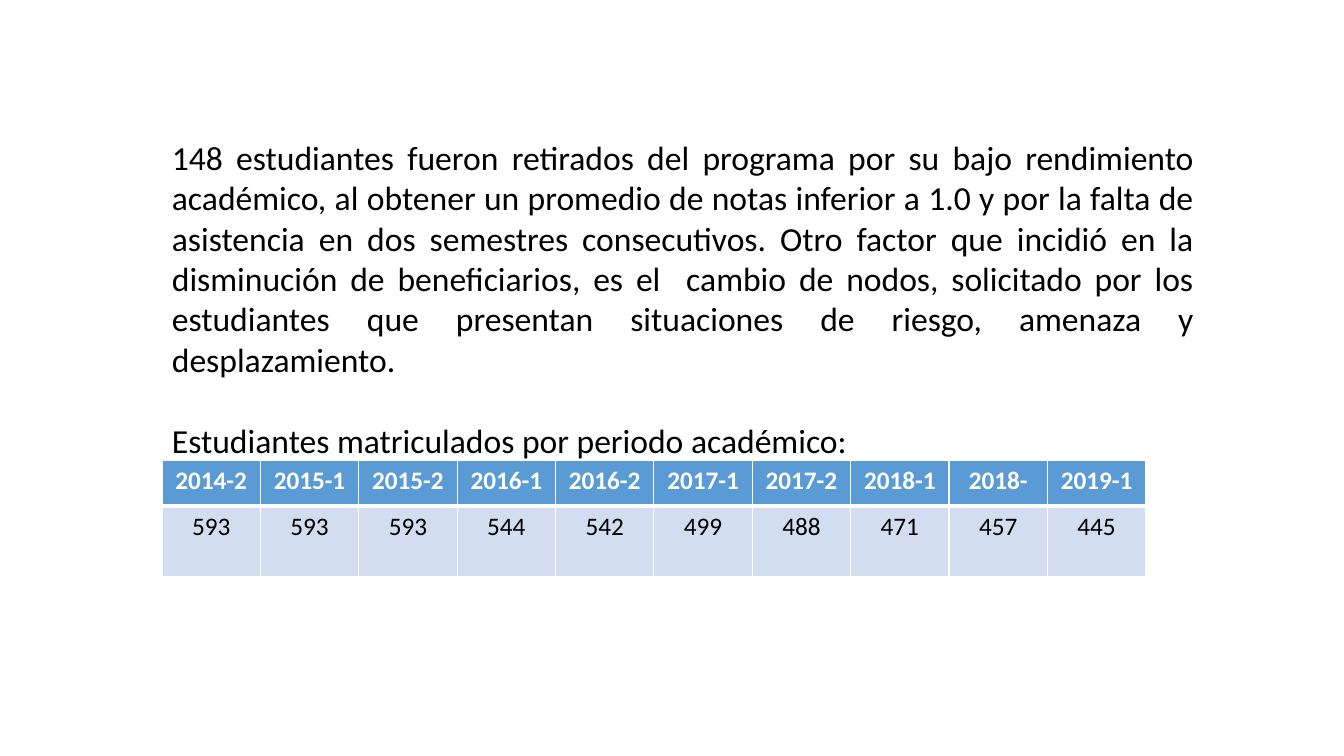
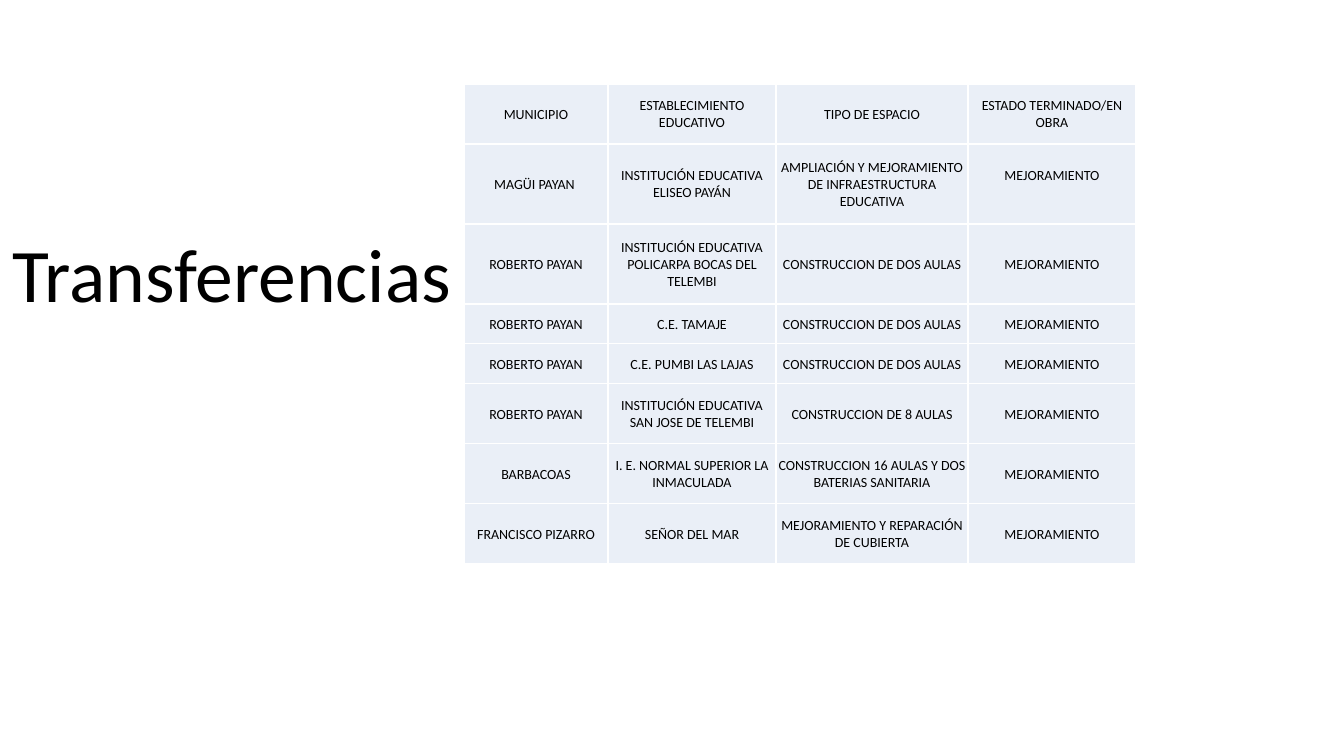
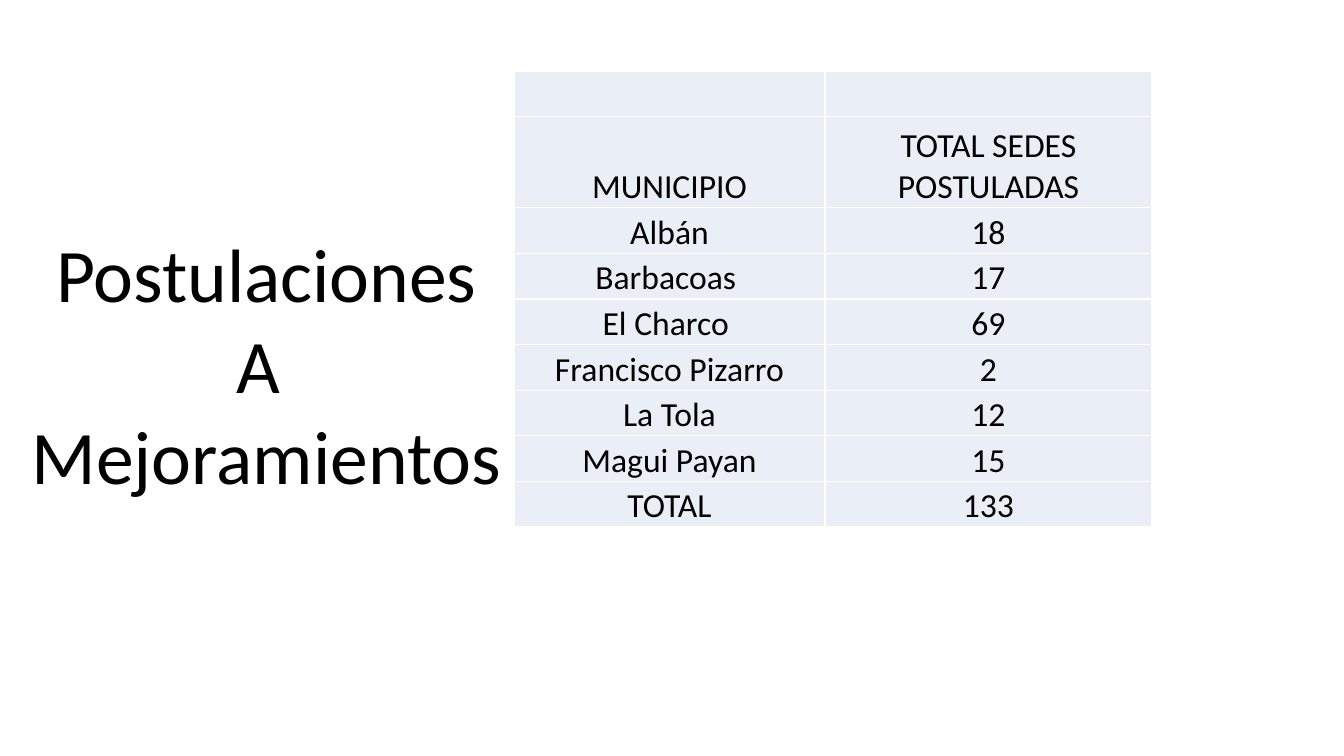
from dataclasses import dataclass

from lxml.etree import SubElement
from pptx import Presentation
from pptx.dml.color import RGBColor
from pptx.enum.text import MSO_ANCHOR as Anchor, MSO_AUTO_SIZE as AutoSize, PP_ALIGN as Align
from pptx.oxml.ns import qn
from pptx.util import Emu, Pt

EMU_PER_PX = 914400 / 100.8
TITLE_ONLY, BLANK = 5, 6


@dataclass(frozen=True)
class Theme:
    font: str = "Calibri"
    ink: str = "000000"
    paper: str = "FFFFFF"
    header: str = "5B9BD5"
    band: str = "D2DEEF"
    pale: str = "EAEFF7"
    title: int = 54
    body: int = 24
    figures: int = 18
    small: int = 10


THEME = Theme()


def px(length):
    return Emu(round(length * EMU_PER_PX))


def add_run(paragraph, text, size, color=THEME.ink, bold=False):
    run = paragraph.add_run()
    run.text = text
    run.font.name = THEME.font
    run.font.size = Pt(size)
    run.font.bold = bold
    run.font.color.rgb = RGBColor.from_string(color)


def add_lines(frame, lines, size, align, gap=0):
    """Write one paragraph per line, with gap points between them."""
    for index, line in enumerate(lines):
        paragraph = frame.paragraphs[0] if index == 0 else frame.add_paragraph()
        paragraph.alignment = align
        if index and gap:
            paragraph.space_before = Pt(gap)
        add_run(paragraph, line, size)


def set_borders(cell, bottom=1):
    properties = cell._tc.get_or_add_tcPr()
    for side, width in (("L", 1), ("R", 1), ("T", 1), ("B", bottom)):
        line = SubElement(properties, qn(f"a:ln{side}"), w=str(Pt(width)))
        fill = SubElement(line, qn("a:solidFill"))
        SubElement(fill, qn("a:srgbClr"), val=THEME.paper)


def share(total, weights):
    return [px(total * weight / sum(weights)) for weight in weights]


def add_grid(slide, box, rows, columns, heights, size, anchor=Anchor.TOP,
             tight=True, fill=THEME.pale, header=False):
    """Place a table; columns and heights are relative weights within the box."""
    table = slide.shapes.add_table(len(rows), len(columns), *map(px, box)).table
    table.first_row = table.horz_banding = False
    for column, width in zip(table.columns, share(box[2], columns)):
        column.width = width
    for row, height in zip(table.rows, share(box[3], heights)):
        row.height = height

    for r, texts in enumerate(rows):
        is_header = header and r == 0
        for c, text in enumerate(texts):
            cell = table.cell(r, c)
            set_borders(cell, bottom=3 if is_header else 1)
            cell.fill.solid()
            cell.fill.fore_color.rgb = RGBColor.from_string(THEME.header if is_header else fill)
            if not text:
                continue
            cell.vertical_anchor = anchor
            if tight:
                cell.margin_left = cell.margin_top = cell.margin_right = px(1)
                cell.margin_bottom = 0
            paragraph = cell.text_frame.paragraphs[0]
            paragraph.alignment = Align.CENTER
            add_run(paragraph, text, size, THEME.paper if is_header else THEME.ink, is_header)
    return table


def add_side_title(slide, box, lines):
    title = slide.shapes.title
    title.left, title.top, title.width, title.height = map(px, box)
    frame = title.text_frame
    frame.word_wrap = False
    frame.auto_size = AutoSize.SHAPE_TO_FIT_TEXT
    frame.vertical_anchor = Anchor.TOP
    add_lines(frame, lines, THEME.title, Align.CENTER)


def enrolment_slide(deck):
    slide = deck.slides.add_slide(deck.slide_layouts[BLANK])

    # Explanation and table caption
    frame = slide.shapes.add_textbox(*map(px, (162, 132, 1042, 417))).text_frame
    frame.word_wrap = True
    add_lines(frame, [
        "148 estudiantes fueron retirados del programa por su bajo rendimiento académico, "
        "al obtener un promedio de notas inferior a 1.0 y por la falta de asistencia en dos "
        "semestres consecutivos. Otro factor que incidió en la disminución de beneficiarios, "
        "es el  cambio de nodos, solicitado por los estudiantes que presentan situaciones de "
        "riesgo, amenaza y desplazamiento.",
        "Estudiantes matriculados por periodo académico:",
    ], THEME.body, Align.JUSTIFY, gap=29)

    # Students per term
    terms = ["2014-2", "2015-1", "2015-2", "2016-1", "2016-2",
             "2017-1", "2017-2", "2018-1", "2018-", "2019-1"]
    students = ["593", "593", "593", "544", "542", "499", "488", "471", "457", "445"]
    add_grid(slide, (162, 460, 984, 117), [terms, students], [1] * len(terms), [46, 71],
             THEME.figures, tight=False, fill=THEME.band, header=True)


def transfers_slide(deck):
    slide = deck.slides.add_slide(deck.slide_layouts[TITLE_ONLY])
    add_side_title(slide, (0, 222, 464, 102), ["Transferencias"])

    # Works by school
    two_rooms = "CONSTRUCCION DE DOS AULAS"
    works = [
        ("MAGÜI PAYAN ", "INSTITUCIÓN EDUCATIVA ELISEO PAYÁN",
         "AMPLIACIÓN Y MEJORAMIENTO DE INFRAESTRUCTURA EDUCATIVA"),
        ("ROBERTO PAYAN", "INSTITUCIÓN EDUCATIVA POLICARPA BOCAS DEL TELEMBI", two_rooms),
        ("ROBERTO PAYAN", "C.E. TAMAJE", two_rooms),
        ("ROBERTO PAYAN", "C.E. PUMBI LAS LAJAS", two_rooms),
        ("ROBERTO PAYAN", "INSTITUCIÓN EDUCATIVA SAN JOSE DE TELEMBI",
         "CONSTRUCCION DE 8 AULAS"),
        ("BARBACOAS", "I. E. NORMAL SUPERIOR LA INMACULADA",
         "CONSTRUCCION 16 AULAS Y DOS BATERIAS SANITARIA"),
        ("FRANCISCO PIZARRO", "SEÑOR DEL MAR", "MEJORAMIENTO Y REPARACIÓN DE CUBIERTA"),
    ]
    headings = ("MUNICIPIO", "ESTABLECIMIENTO EDUCATIVO", "TIPO DE ESPACIO",
                "ESTADO TERMINADO/EN OBRA")
    rows = [headings] + [work + ("MEJORAMIENTO",) for work in works]
    table = add_grid(slide, (464, 84, 672, 480), rows, [6, 7, 8, 7],
                     [3, 4, 4, 2, 2, 3, 3, 3], THEME.small, Anchor.MIDDLE)
    # The first status sits above the middle of its row
    table.cell(1, 3).margin_bottom = px(17)


def applications_slide(deck):
    slide = deck.slides.add_slide(deck.slide_layouts[TITLE_ONLY])
    add_side_title(slide, (19, 222, 495, 285), ["Postulaciones", "A ", "Mejoramientos"])

    # Sites per municipality
    rows = [
        ("", ""),
        ("MUNICIPIO", "TOTAL SEDES POSTULADAS"),
        ("Albán", "18"),
        ("Barbacoas ", "17"),
        ("El Charco ", "69"),
        ("Francisco Pizarro", "2"),
        ("La Tola", "12"),
        ("Magui Payan", "15"),
        ("TOTAL", "133"),
    ]
    add_grid(slide, (514, 71, 638, 456), rows, [311, 327], [1, 2] + [1] * 7,
             THEME.body, Anchor.BOTTOM)


def main():
    deck = Presentation()
    deck.slide_width, deck.slide_height = px(1344), px(756)
    enrolment_slide(deck)
    transfers_slide(deck)
    applications_slide(deck)
    deck.save("out.pptx")


if __name__ == "__main__":
    main()
